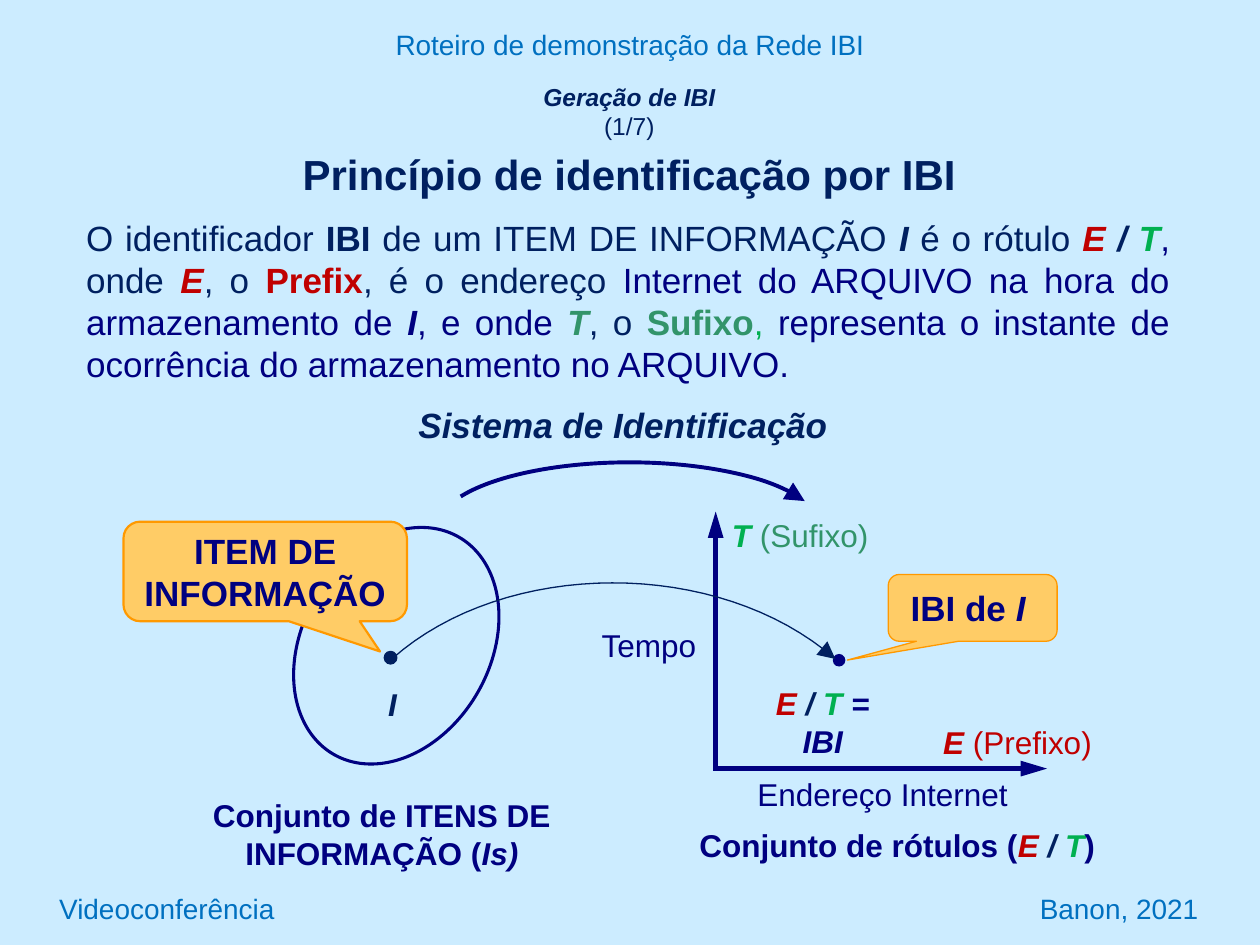
from lxml.etree import SubElement
from pptx import Presentation
from pptx.dml.color import RGBColor as RGB
from pptx.enum.shapes import MSO_CONNECTOR as LINK, MSO_SHAPE as KIND
from pptx.enum.text import MSO_ANCHOR as ANCHOR, PP_ALIGN as ALIGN
from pptx.oxml.ns import qn
from pptx.util import Inches, Pt

SKY = RGB(0xCC, 0xEC, 0xFF)
NAVY = RGB(0x00, 0x00, 0x80)
DARK = RGB(0x00, 0x20, 0x60)
RED = RGB(0xC0, 0x00, 0x00)
GREEN = RGB(0x00, 0xB0, 0x50)
MOSS = RGB(0x32, 0x94, 0x6A)
BLUE = RGB(0x00, 0x70, 0xC0)
SAND = RGB(0xFF, 0xCC, 0x66)
GOLD = RGB(0xFF, 0x99, 0x00)

# Grid of 100 columns and 75 rows
WIDE, HIGH = Inches(10), Inches(7.5)
COL, ROW = WIDE / 100, HIGH / 75

# The label E / T, coloured alike wherever it stands
LABEL = [("E", RED, "bi"), (" / ", DARK, "bi"), ("T", GREEN, "bi")]


def cells(x, y, w, h):
    return int(x * COL), int(y * ROW), int(w * COL), int(h * ROW)


def write(para, runs, size, align=ALIGN.CENTER):
    """Add runs of (text, colour, style); style holds b and i; None breaks the line."""
    para.alignment = align
    for item in runs:
        if item is None:
            para.add_line_break()
            continue
        text, tint, style = item
        run = para.add_run()
        run.text = text
        font = run.font
        font.name, font.size, font.color.rgb = "Arial", Pt(size), tint
        font.bold, font.italic = "b" in style, "i" in style


def text(slide, at, runs, size=18, wrap=True, align=ALIGN.CENTER):
    frame = slide.shapes.add_textbox(*cells(*at)).text_frame
    frame.word_wrap = wrap
    write(frame.paragraphs[0], runs, size, align)
    return frame


def pen(shape, tint, width, head=None):
    """Set the line; head is the width of a long arrowhead at its end."""
    shape.line.color.rgb, shape.line.width = tint, Pt(width)
    if head:
        SubElement(shape.line._get_or_add_ln(), qn("a:tailEnd"),
                   type="triangle", w=head, len="lg")


def form(slide, kind, at, fill=None, adj=()):
    shape = slide.shapes.add_shape(kind, *cells(*at))
    shape.shadow.inherit = False
    for i, value in enumerate(adj):
        shape.adjustments[i] = value
    if fill is None:
        shape.fill.background()
    else:
        shape.fill.solid()
        shape.fill.fore_color.rgb = fill
    shape.line.fill.background()
    return shape


def callout(slide, at, tip, width, runs):
    shape = form(slide, KIND.ROUNDED_RECTANGULAR_CALLOUT, at, SAND, (*tip, 0.167))
    pen(shape, GOLD, width)
    frame = shape.text_frame
    frame.word_wrap, frame.vertical_anchor = True, ANCHOR.MIDDLE
    write(frame.paragraphs[0], runs, 20)
    return frame


def axis(slide, x1, y1, x2, y2):
    line = slide.shapes.add_connector(LINK.STRAIGHT, *cells(x1, y1, x2, y2))
    pen(line, NAVY, 3, "med")
    SubElement(line._element.spPr, qn("a:effectLst"))


def curve(slide, knots, steps=32):
    """Draw a cubic curve through its four control points."""
    dots = []
    for i in range(steps + 1):
        t = i / steps
        parts = ((1 - t) ** 3, 3 * t * (1 - t) ** 2, 3 * t * t * (1 - t), t ** 3)
        dots.append((sum(p * x for p, (x, _) in zip(parts, knots)) * COL,
                     sum(p * y for p, (_, y) in zip(parts, knots)) * ROW))
    pad = slide.shapes.build_freeform(*dots[0])
    pad.add_line_segments(dots[1:], close=False)
    shape = pad.convert_to_shape()
    shape.shadow.inherit = False
    shape.fill.background()
    pen(shape, DARK, 0.75, "lg")


def heading(slide):
    title = slide.shapes.title
    title.left, title.top, title.width, title.height = cells(7.4, 6, 85.1, 9.8)
    frame = title.text_frame
    frame.vertical_anchor = ANCHOR.TOP
    write(frame.paragraphs[0],
          [("Geração de IBI", DARK, "bi"), None, ("(1/7)", DARK, "")], 14)
    para = frame.add_paragraph()
    para.space_before = Pt(4.4)
    write(para, [("Princípio de identificação por IBI", DARK, "b")], 24)


def margins(slide):
    text(slide, (0, 1.7, 100, 3.7),
         [("Roteiro de demonstração da Rede IBI", BLUE, "")], 16)
    foot = text(slide, (0, 70, 100, 4.2),
                [("Videoconferência\tBanon, 2021", BLUE, "")], 16, align=ALIGN.LEFT)
    foot.vertical_anchor = ANCHOR.MIDDLE
    foot.margin_left = foot.margin_right = int(4.7 * COL)
    tabs = SubElement(foot.paragraphs[0]._p.get_or_add_pPr(), qn("a:tabLst"))
    SubElement(tabs, qn("a:tab"), pos=str(int(90.4 * COL)), algn="r")


def body(slide):
    frame = text(slide, (5.85, 17, 88, 14.4), [
        ("O identificador ", DARK, ""), ("IBI", DARK, "b"),
        (" de um ITEM DE INFORMAÇÃO ", DARK, ""), ("I", DARK, "bi"),
        (" é o rótulo ", DARK, ""), *LABEL, (", ", NAVY, ""),
        ("onde ", DARK, ""), ("E", RED, "bi"), (", o ", DARK, ""),
        ("Prefix", RED, "b"), (", é o endereço", DARK, ""),
        (" Internet do ARQUIVO na hora do armazenamento de ", NAVY, ""),
        ("I", NAVY, "bi"), (", e onde ", NAVY, ""), ("T", MOSS, "bi"),
        (", o ", DARK, ""), ("Sufixo", MOSS, "b"), (", ", GREEN, ""),
        ("representa o instante de ocorrência do armazenamento no ARQUIVO.",
         NAVY, ""),
    ], 20, align=ALIGN.JUSTIFY)
    frame.margin_top, frame.margin_bottom = int(0.2 * ROW), 0


def items(slide):
    ring = form(slide, KIND.OVAL, (24, 41.3, 14.9, 19.9))
    ring.rotation = 30
    pen(ring, NAVY, 1.75)
    dot = form(slide, KIND.OVAL, (30.5, 51.7, 1, 1), DARK)
    pen(dot, DARK, 0.75)
    callout(slide, (9.8, 41.4, 22.5, 7.9), (0.405, 0.804), 1.25,
            [("ITEM DE INFORMAÇÃO", NAVY, "b")])
    text(slide, (29.8, 53.9, 2.7, 4), [("I", DARK, "bi")], wrap=False)
    text(slide, (15.2, 62.7, 30.2, 7.1),
         [("Conjunto de ITENS DE INFORMAÇÃO (", NAVY, "b"), ("Is)", NAVY, "bi")])


def labels(slide):
    axis(slide, 56.6, 61, 83.1, 61)
    axis(slide, 56.8, 61, 56.8, 40.6)
    form(slide, KIND.OVAL, (66.1, 51.9, 1, 1), NAVY)
    name = callout(slide, (70.5, 45.6, 13.4, 5.3), (-0.742, 0.782), 0.75,
                   [("IBI de ", NAVY, "b"), ("I", NAVY, "bi")])
    name.margin_right = int(1.7 * COL)
    text(slide, (58.8, 53.8, 13, 7.1),
         [*LABEL, (" =", NAVY, "bi"), None, ("IBI", NAVY, "bi")])
    text(slide, (56.6, 40.5, 13.8, 4),
         [("T ", GREEN, "bi"), ("(Sufixo)", MOSS, "")])
    text(slide, (73.7, 56.9, 14.1, 4),
         [("E ", RED, "bi"), ("(Prefixo)", RED, "")])
    text(slide, (46.7, 49.2, 9.6, 4), [("Tempo", NAVY, "")], wrap=False)
    text(slide, (59, 61, 22.1, 4), [("Endereço Internet", NAVY, "")], wrap=False)
    text(slide, (54, 65.1, 34.4, 4),
         [("Conjunto de rótulos (", NAVY, "b"), *LABEL, (")", NAVY, "b")], wrap=False)


def system(slide):
    curve(slide, [(31.1, 52.3), (40.1, 44.3), (57, 44.2), (66.3, 52.3)])
    arc = form(slide, KIND.ARC, (34.7, 36.7, 30.5, 10.4), adj=(114.33, 210.79))
    pen(arc, NAVY, 2.25, "lg")
    text(slide, (31.7, 31.5, 35.5, 4.4),
         [("Sistema de Identificação", DARK, "bi")], 20, wrap=False)


def main():
    deck = Presentation()
    deck.slide_width, deck.slide_height = WIDE, HIGH
    slide = deck.slides.add_slide(deck.slide_layouts[5])
    slide.background.fill.solid()
    slide.background.fill.fore_color.rgb = SKY
    # Words
    heading(slide)
    margins(slide)
    body(slide)
    # Diagram
    items(slide)
    labels(slide)
    system(slide)
    deck.save("out.pptx")


if __name__ == "__main__":
    main()
